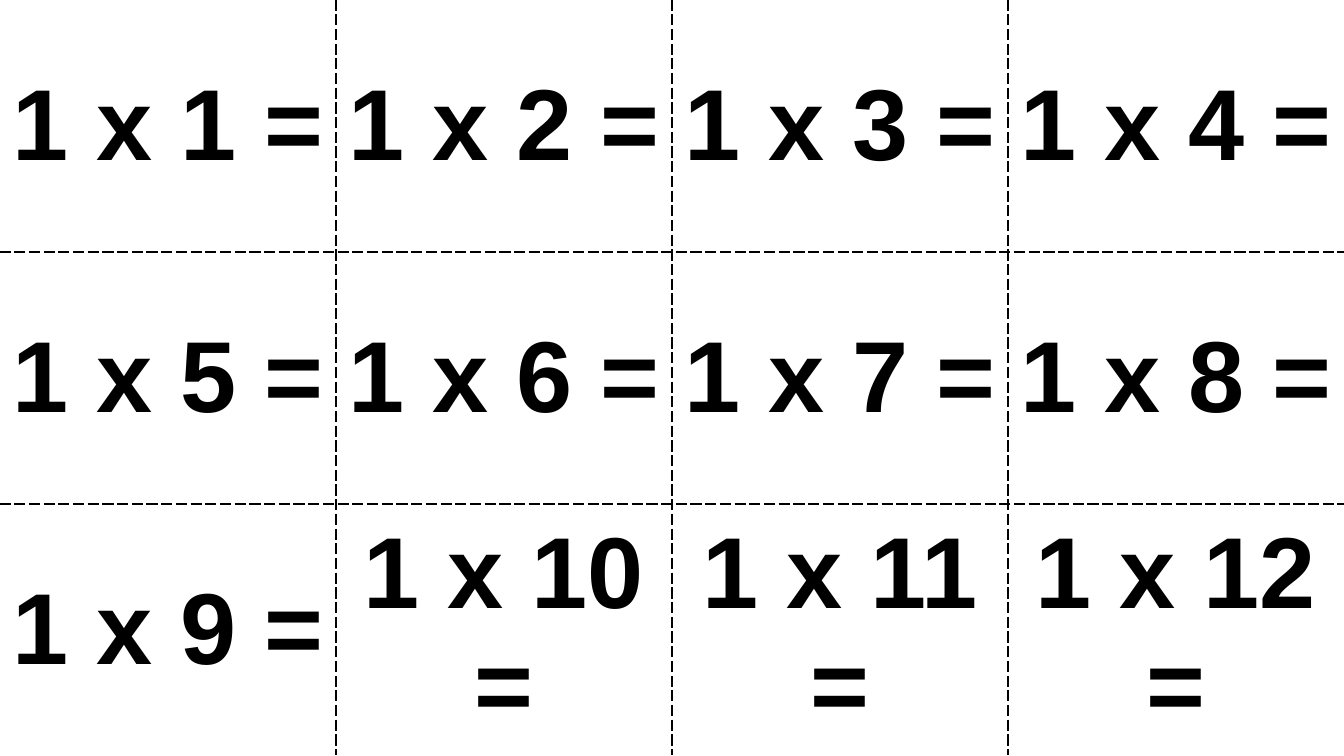
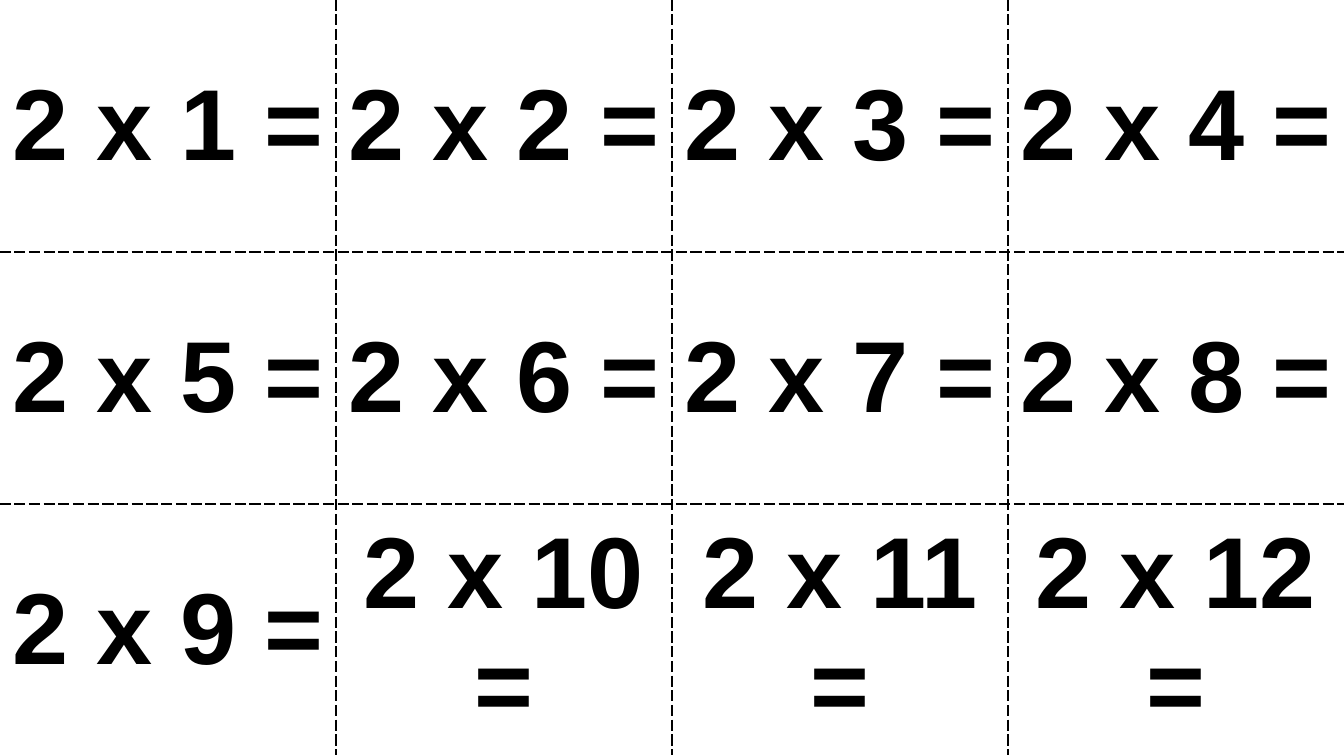
import dataclasses

import pptx
import pptx.dml.color
import pptx.enum.text
import pptx.oxml
import pptx.oxml.ns
import pptx.util


@dataclasses.dataclass(frozen=True)
class Theme:
    font: str = "Arial"
    ink: str = "000000"
    paper: str = "FFFFFF"
    fact_size: int = 72
    cut_width: int = 1


THEME = Theme()
ROWS, COLUMNS = 3, 4
FACTORS = (1, 2)


def write_text(cell, text, size=THEME.fact_size, color=THEME.ink, bold=True):
    cell.vertical_anchor = pptx.enum.text.MSO_ANCHOR.MIDDLE
    paragraph = cell.text_frame.paragraphs[0]
    paragraph.alignment = pptx.enum.text.PP_ALIGN.CENTER
    run = paragraph.add_run()
    run.text = text
    run.font.name = THEME.font
    run.font.size = pptx.util.Pt(size)
    run.font.bold = bold
    run.font.color.rgb = pptx.dml.color.RGBColor.from_string(color)


def add_cut_line(cell, side):
    """Draw a dashed border on one side of a cell: L, R, T or B."""
    cell_properties = cell._tc.get_or_add_tcPr()
    cell_properties.append(pptx.oxml.parse_xml(
        f'<a:ln{side} {pptx.oxml.ns.nsdecls("a")} w="{pptx.util.Pt(THEME.cut_width)}">'
        f'<a:solidFill><a:srgbClr val="{THEME.ink}"/></a:solidFill>'
        f'<a:prstDash val="dash"/></a:ln{side}>'))


deck = pptx.Presentation()
deck.slide_width = pptx.util.Inches(13.33)
deck.slide_height = pptx.util.Inches(7.5)
blank_layout = deck.slide_layouts[6]

for factor in FACTORS:
    slide = deck.slides.add_slide(blank_layout)
    cards = slide.shapes.add_table(
        ROWS, COLUMNS, 0, 0, deck.slide_width, deck.slide_height).table
    cards.first_row = False
    cards.horz_banding = False

    for row in range(ROWS):
        for column in range(COLUMNS):
            card = cards.cell(row, column)
            # Cut lines run between cards only, never along the slide edge.
            inner_sides = {"L": column > 0, "R": column < COLUMNS - 1,
                           "T": row > 0, "B": row < ROWS - 1}
            for side, is_inner in inner_sides.items():
                if is_inner:
                    add_cut_line(card, side)
            card.fill.solid()
            card.fill.fore_color.rgb = pptx.dml.color.RGBColor.from_string(THEME.paper)
            multiplier = row * COLUMNS + column + 1
            write_text(card, f"{factor} x {multiplier} =")

deck.save("out.pptx")
